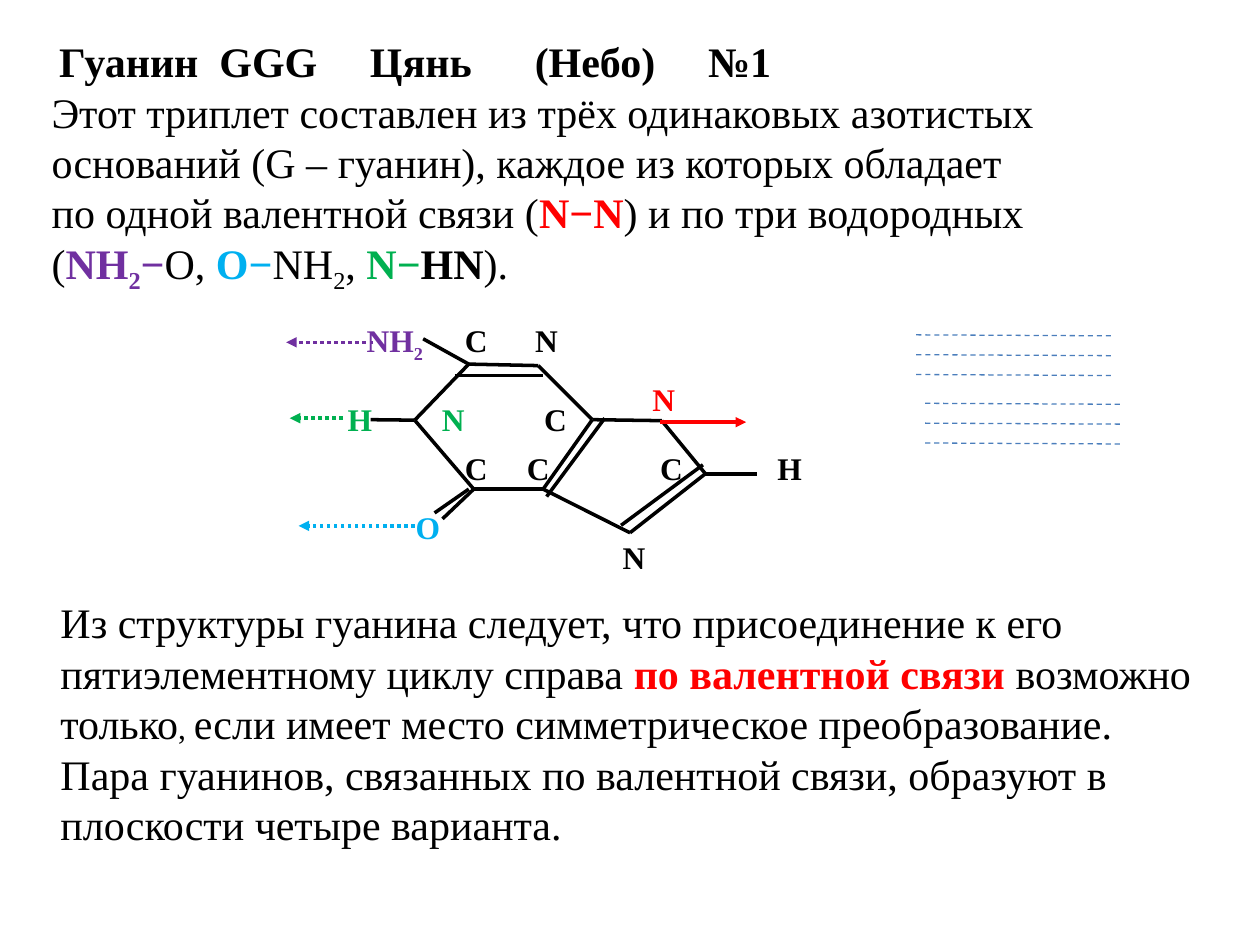
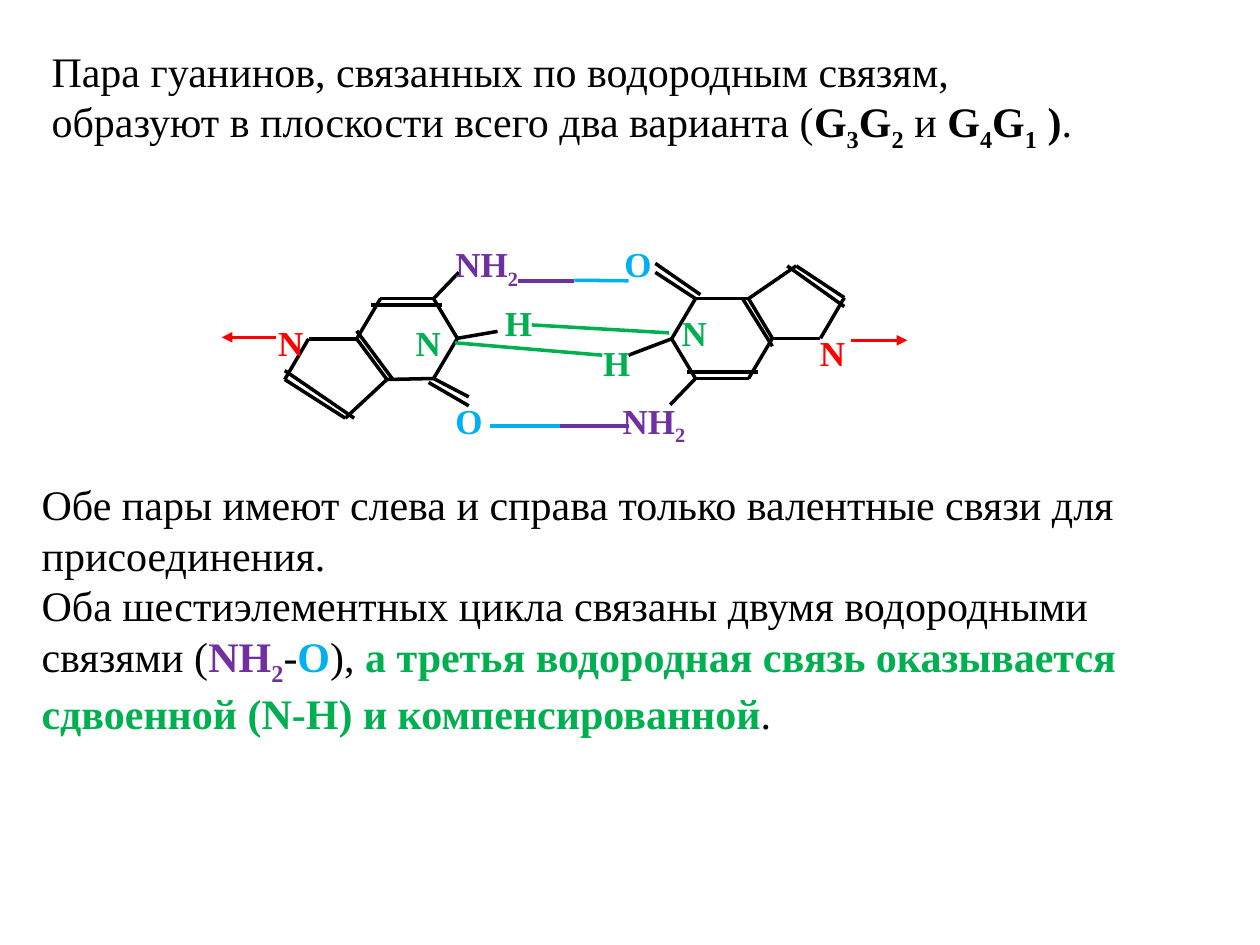
from lxml import etree
from pptx import Presentation
from pptx.dml.color import RGBColor
from pptx.enum.dml import MSO_LINE
from pptx.enum.shapes import MSO_CONNECTOR
from pptx.enum.text import MSO_ANCHOR, MSO_AUTO_SIZE, PP_ALIGN
from pptx.oxml.ns import qn
from pptx.util import Cm, Pt

STRAIGHT = MSO_CONNECTOR.STRAIGHT
DOTTED = MSO_LINE.ROUND_DOT
DASHED = MSO_LINE.DASH
TOP = MSO_ANCHOR.TOP
LEFT = PP_ALIGN.LEFT
NO_AUTOFIT = MSO_AUTO_SIZE.NONE

FONT = "Times New Roman"
BODY_SIZE = 24
SMALL_SIZE = 18
COLORS = {
    "black": "000000",
    "red": "FF0000",
    "purple": "7030A0",
    "blue": "00B0F0",
    "green": "00B050",
    "steel": "4B7EBC",
}


def write_text(shape, paragraphs, size):
    frame = shape.text_frame
    frame.word_wrap = True
    frame.auto_size = NO_AUTOFIT
    frame.vertical_anchor = TOP
    for index, runs in enumerate(paragraphs):
        paragraph = frame.add_paragraph() if index else frame.paragraphs[0]
        paragraph.alignment = LEFT
        paragraph.font.name = FONT
        paragraph.font.size = Pt(size)
        for text, color, bold, *own_size in runs:
            plain, *marked = text.split("_")
            pieces = [(plain, False)]
            for part in marked:
                pieces += [(part[0], True), (part[1:], False)]
            for piece, subscript in pieces:
                if not piece:
                    continue
                run = paragraph.add_run()
                run.text = piece
                run.font.bold = bold
                run.font.color.rgb = RGBColor.from_string(COLORS[color])
                if own_size:
                    run.font.size = Pt(own_size[0])
                if subscript:
                    run._r.get_or_add_rPr().set("baseline", "-25000")


def draw_line(slide, start, end, color="black", width=2, dash=None, arrow=False):
    ends = [Cm(value) for value in (*start, *end)]
    connector = slide.shapes.add_connector(STRAIGHT, *ends)
    connector.line.color.rgb = RGBColor.from_string(COLORS[color])
    connector.line.width = Pt(width)
    if dash:
        connector.line.dash_style = dash
    if arrow:
        line = connector.line._get_or_add_ln()
        etree.SubElement(line, qn("a:tailEnd")).set("type", "triangle")
    etree.SubElement(connector._element.spPr, qn("a:effectLst"))


presentation = Presentation()
presentation.slide_width = Cm(25.4)
presentation.slide_height = Cm(19.05)
title_only = presentation.slide_layouts[5]
blank = presentation.slide_layouts[6]
guanine_slide = presentation.slides.add_slide(title_only)
pair_slide = presentation.slides.add_slide(blank)

title = guanine_slide.shapes.title
title.left, title.top, title.width, title.height = Cm(0.79), Cm(0.58), Cm(23), Cm(1.2)
heading_words = ["Гуанин", "GGG", "Цянь", "(Небо)", "№1"]
heading_gaps = [6, 24, 30, 24]
heading_runs = [(heading_words[0], "black", True)]
for word in heading_words[1:]:
    heading_runs += [(" ", "black", True), (word, "black", True)]
write_text(title, [heading_runs], BODY_SIZE)
heading = title.text_frame.paragraphs[0]
heading._p.get_or_add_pPr().set("indent", str(Cm(0.15)))
for space, gap in zip(heading.runs[1::2], heading_gaps):
    space._r.get_or_add_rPr().set("spc", str(gap * 100))

body_texts = [
    (guanine_slide, (0.79, 1.61, 23, 4.37), [
        [("Этот триплет составлен из трёх одинаковых азотистых", "black", False)],
        [("оснований (G – гуанин), каждое из которых обладает", "black", False)],
        [("по одной валентной связи (", "black", False),
         ("N−N", "red", True),
         (") и по три водородных", "black", False)],
        [("(", "black", False),
         ("NH_2−", "purple", True),
         ("O, ", "black", False),
         ("O−", "blue", True),
         ("NH_2, ", "black", False),
         ("N−", "green", True),
         ("HN", "black", True),
         (").", "black", False)],
    ]),
    (guanine_slide, (0.97, 11.91, 23.85, 5.38), [
        [("Из структуры гуанина следует, что присоединение к его "
          "пятиэлементному циклу справа ", "black", False),
         ("по валентной связи ", "red", True),
         ("возможно только", "black", False),
         (", ", "black", False, SMALL_SIZE),
         ("если имеет место симметрическое преобразование.", "black", False)],
        [("Пара гуанинов, связанных по валентной связи, образуют в "
          "плоскости четыре варианта.", "black", False)],
    ]),
    (pair_slide, (0.79, 0.79, 23, 2.31), [
        [("Пара гуанинов, связанных по водородным связям,", "black", False)],
        [("образуют в плоскости всего два варианта (", "black", False),
         ("G_3G_2 ", "black", True),
         ("и ", "black", False),
         ("G_4G_1 )", "black", True),
         (".", "black", False)],
    ]),
    (pair_slide, (0.59, 9.53, 24, 5.38), [
        [("Обе пары имеют слева и справа только валентные связи для", "black", False)],
        [("присоединения.", "black", False)],
        [("Оба шестиэлементных цикла связаны двумя водородными связями (", "black", False),
         ("NH_2", "purple", True),
         ("-", "black", False),
         ("O", "blue", True),
         ("), ", "black", False),
         ("а третья водородная связь оказывается сдвоенной (N-H) "
          "и компенсированной", "green", True),
         (".", "black", False)],
    ]),
]
for slide, box, paragraphs in body_texts:
    body = slide.shapes.add_textbox(*[Cm(value) for value in box])
    write_text(body, paragraphs, BODY_SIZE)

guanine_bonds = [
    ("amine carbon", "ring nitrogen"),
    ("ring nitrogen", "fusion top"),
    ("fusion top", "fusion bottom"),
    ("fusion bottom", "carbonyl"),
    ("carbonyl", "bonding nitrogen"),
    ("bonding nitrogen", "amine carbon"),
    ("amine carbon", "amine"),
    ("bonding nitrogen", "hydrogen"),
    ("carbonyl", "oxygen"),
    ("fusion top", "outer nitrogen"),
    ("outer nitrogen", "outer carbon"),
    ("outer carbon", "lower nitrogen"),
    ("lower nitrogen", "fusion bottom"),
]

single_atoms = {
    "amine carbon": (9.45, 7.34),
    "ring nitrogen": (10.85, 7.37),
    "fusion top": (11.94, 8.46),
    "fusion bottom": (10.95, 9.86),
    "carbonyl": (9.55, 9.86),
    "bonding nitrogen": (8.36, 8.47),
    "amine": (8.53, 6.83),
    "hydrogen": (7.47, 8.46),
    "oxygen": (8.92, 10.46),
    "outer nitrogen": (13.34, 8.48),
    "outer carbon": (14.22, 9.55),
    "lower nitrogen": (12.7, 10.74),
}
single_second_lines = {
    ("amine carbon", "ring nitrogen"): ((-0.28, 0.23), (0.1, 0.2)),
    ("fusion top", "fusion bottom"): ((0.25, -0.03), (0.07, 0.15)),
    ("carbonyl", "oxygen"): ((-0.1, 0), (-0.16, -0.12)),
    ("outer carbon", "lower nitrogen"): ((-0.05, -0.18), (-0.18, -0.15)),
}

left_atoms = {
    "amine carbon": (8.74, 6.02),
    "ring nitrogen": (7.67, 6.02),
    "fusion top": (7.19, 6.83),
    "fusion bottom": (7.8, 7.65),
    "carbonyl": (8.74, 7.63),
    "bonding nitrogen": (9.22, 6.82),
    "amine": (9.25, 5.49),
    "hydrogen": (10.03, 6.68),
    "oxygen": (9.45, 8),
    "outer nitrogen": (6.22, 6.83),
    "outer carbon": (5.74, 7.65),
    "lower nitrogen": (6.96, 8.43),
}
left_second_lines = {
    ("amine carbon", "ring nitrogen"): ((0.18, 0.13), (-0.2, 0.13)),
    ("fusion top", "fusion bottom"): ((0, -0.16), (0.12, 0)),
    ("carbonyl", "oxygen"): ((-0.1, 0.08), (0, 0.18)),
    ("outer carbon", "lower nitrogen"): ((0, -0.18), (0.18, 0)),
}

half_turn_x, half_turn_y = 22.76, 13.65
right_atoms = {
    name: (half_turn_x - x, half_turn_y - y) for name, (x, y) in left_atoms.items()
}
right_atoms.update({
    "fusion bottom": (15.09, 6.02),
    "hydrogen": (12.67, 7.16),
    "oxygen": (13.21, 5.49),
    "lower nitrogen": (16.05, 5.36),
})
right_second_lines = {
    bond: tuple((-dx, -dy) for dx, dy in shifts)
    for bond, shifts in left_second_lines.items()
}

molecules = [
    (guanine_slide, single_atoms, single_second_lines),
    (pair_slide, left_atoms, left_second_lines),
    (pair_slide, right_atoms, right_second_lines),
]
for slide, atoms, second_lines in molecules:
    for bond in guanine_bonds:
        ends = [atoms[name] for name in bond]
        draw_line(slide, *ends)
        if bond in second_lines:
            shifted = [(x + dx, y + dy) for (x, y), (dx, dy) in zip(ends, second_lines[bond])]
            draw_line(slide, *shifted)
draw_line(guanine_slide, single_atoms["outer carbon"], (15.27, 9.55))

arrows = [
    (guanine_slide, 13.31, 15.04, 8.51, "red", None),
    (guanine_slide, 7.52, 5.77, 6.9, "purple", DOTTED),
    (guanine_slide, 8.36, 6.02, 10.6, "blue", DOTTED),
    (guanine_slide, 6.91, 5.84, 8.43, "green", DOTTED),
    (pair_slide, 5.56, 4.47, 6.8, "red", None),
    (pair_slide, 17.15, 18.29, 6.86, "red", None),
]
for slide, tail_x, head_x, y, color, dash in arrows:
    draw_line(slide, (tail_x, y), (head_x, y), color, dash=dash, arrow=True)

bridge_left, bridge_middle, bridge_right = 10.44, 11.58, 12.67
hydrogen_bonds = [
    ((bridge_left, 5.66), (bridge_middle, 5.66), "purple"),
    ((bridge_middle, 5.65), (bridge_right, 5.66), "blue"),
    ((9.88, 8.59), (11.28, 8.59), "blue"),
    ((11.28, 8.59), (bridge_right, 8.59), "purple"),
    ((10.72, 6.55), (13.49, 6.71), "green"),
    ((9.17, 6.91), (12.14, 7.16), "green"),
]
for start, end, color in hydrogen_bonds:
    draw_line(pair_slide, start, end, color)

dash_length, dash_pitch, dash_slope = 3.96, 0.4, 0.02
for left, top in ((18.47, 6.75), (18.65, 8.13)):
    for row in range(3):
        y = top + row * dash_pitch
        end = (left + dash_length, y + dash_slope)
        draw_line(guanine_slide, (left, y), end, "steel", 0.75, DASHED)

guanine_label_rows = {
    6.35: [("NH_2", 7.14, "purple"), ("C", 9.12, "black"), ("N", 10.54, "black")],
    7.54: [("N", 12.9, "red")],
    7.93: [("H", 6.76, "green"), ("N", 8.66, "green"), ("C", 10.72, "black")],
    8.93: [("C", 9.12, "black"), ("C", 10.37, "black"),
           ("C", 13.06, "black"), ("H", 15.42, "black")],
    10.11: [("O", 8.13, "blue")],
    10.72: [("N", 12.3, "black")],
}
pair_label_rows = {
    4.76: [("NH_2", 8.93, "purple"), ("O", 12.34, "blue")],
    5.95: [("H", 9.93, "green")],
    6.15: [("N", 13.49, "green")],
    6.35: [("N", 5.36, "red"), ("N", 8.13, "green")],
    6.55: [("N", 16.28, "red")],
    6.75: [("H", 11.91, "green")],
    7.92: [("O", 8.93, "blue"), ("NH_2", 12.3, "purple")],
}
for slide, label_rows, size in (
    (guanine_slide, guanine_label_rows, 18),
    (pair_slide, pair_label_rows, 20),
):
    for top, labels in label_rows.items():
        for symbol, left, color in labels:
            width = 1.95 if "_" in symbol else 1.2
            label = slide.shapes.add_textbox(Cm(left), Cm(top), Cm(width), Cm(1.1))
            write_text(label, [[(symbol, color, True)]], size)

presentation.save("out.pptx")
